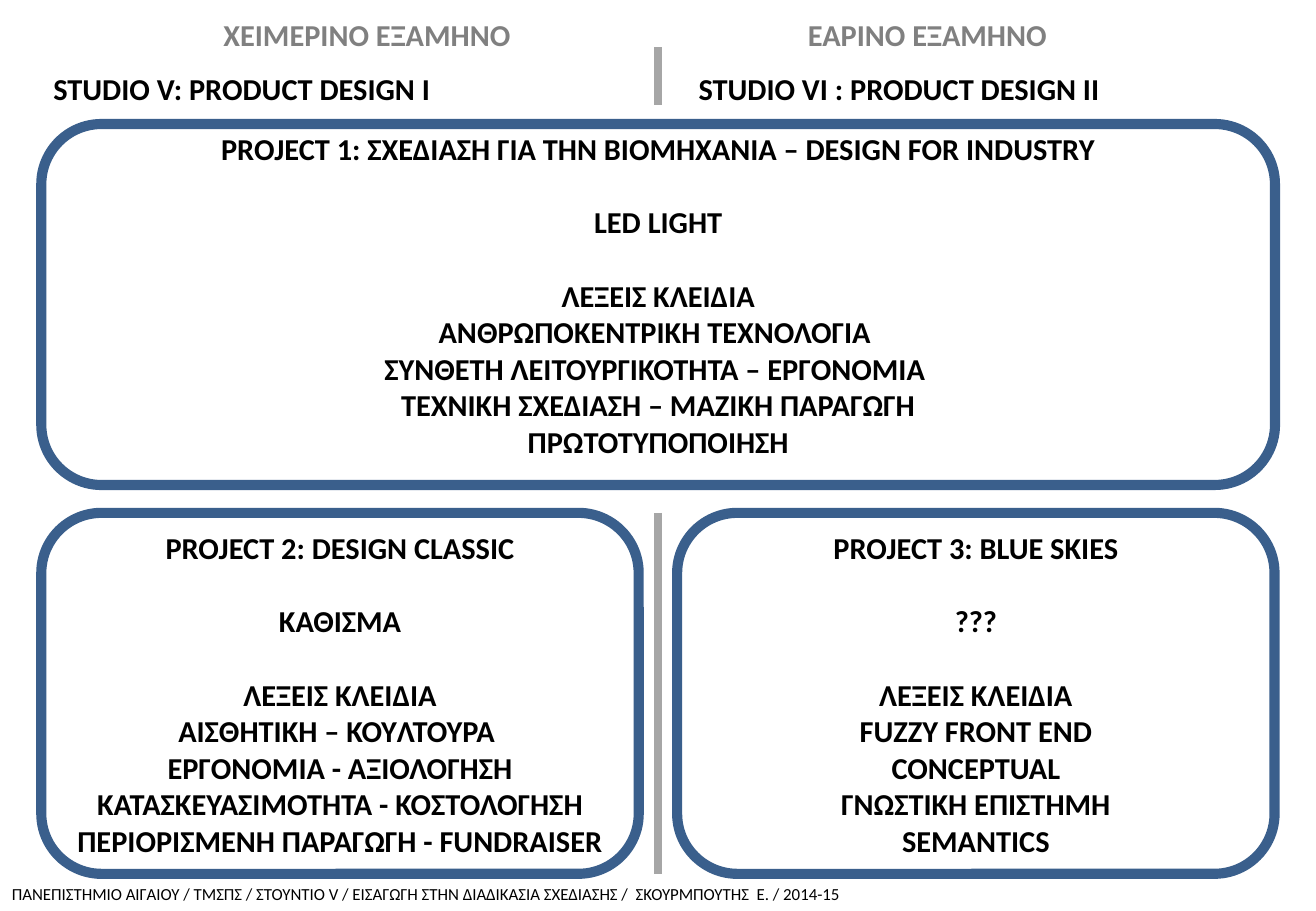
from dataclasses import dataclass

from pptx import Presentation
from pptx.dml.color import RGBColor
from pptx.enum.shapes import MSO_CONNECTOR, MSO_SHAPE
from pptx.enum.text import MSO_ANCHOR, PP_ALIGN
from pptx.oxml.ns import qn
from pptx.util import Pt
from lxml import etree

ROUNDED = MSO_SHAPE.ROUNDED_RECTANGLE
STRAIGHT = MSO_CONNECTOR.STRAIGHT
LEFT, CENTER = PP_ALIGN.LEFT, PP_ALIGN.CENTER
TOP = MSO_ANCHOR.TOP


@dataclass(frozen=True)
class Theme:
    """Colours, font and sizes of the slide."""
    font: str = "Calibri"
    ink: RGBColor = RGBColor(0x00, 0x00, 0x00)
    muted: RGBColor = RGBColor(0x80, 0x80, 0x80)
    divider: RGBColor = RGBColor(0xA6, 0xA6, 0xA6)
    frame: RGBColor = RGBColor(0x3A, 0x5F, 0x8C)
    body: float = 18
    footer: float = 10
    line_height: float = 22
    frame_width: float = 6
    divider_width: float = 4.5


@dataclass(frozen=True)
class Box:
    """A rectangle in points."""
    left: float
    top: float
    width: float
    height: float

    def lengths(self):
        """Return the four lengths for python-pptx."""
        return Pt(self.left), Pt(self.top), Pt(self.width), Pt(self.height)


THEME = Theme()
PAGE = Box(0, 0, 779.76, 540)
INDUSTRY = Box(24.5, 73.5, 731, 214)
CLASSIC = Box(24.5, 304, 354, 214)
BLUE_SKIES = Box(401.25, 304, 354, 214)
DIVIDER_X = 390

SEMESTERS = [
    (24.5, "ΧΕΙΜΕΡΙΝΟ ΕΞΑΜΗΝΟ", 125.3, "STUDIO V: PRODUCT DESIGN I"),
    (406.8, "ΕΑΡΙΝΟ ΕΞΑΜΗΝΟ", 471.6, "STUDIO VΙ : PRODUCT DESIGN II"),
]
PROJECTS = [
    (INDUSTRY, 0, "PROJECT 1: ΣΧΕΔΙΑΣΗ ΓΙΑ ΤΗΝ ΒΙΟΜΗΧΑΝΙΑ – DESIGN FOR INDUSTRY",
     "LED LIGHT",
     ["ΑΝΘΡΩΠΟΚΕΝΤΡΙΚΗ ΤΕΧΝΟΛΟΓΙΑ ", "ΣΥΝΘΕΤΗ ΛΕΙΤΟΥΡΓΙΚΟΤΗΤΑ – ΕΡΓΟΝΟΜΙΑ ",
      "ΤΕΧΝΙΚΗ ΣΧΕΔΙΑΣΗ – ΜΑΖΙΚΗ ΠΑΡΑΓΩΓΗ", "ΠΡΩΤΟΤΥΠΟΠΟΙΗΣΗ"]),
    (CLASSIC, 6, "PROJECT 2: DESIGN CLASSIC", "ΚΑΘΙΣΜΑ",
     ["ΑΙΣΘΗΤΙΚΗ – KOYΛΤΟΥΡΑ ", "ΕΡΓΟΝΟΜΙΑ - ΑΞΙΟΛΟΓΗΣΗ",
      "ΚΑΤΑΣΚΕΥΑΣΙΜΟΤΗΤΑ - ΚΟΣΤΟΛΟΓΗΣΗ", "ΠΕΡΙΟΡΙΣΜΕΝΗ ΠΑΡΑΓΩΓΗ - FUNDRAISER"]),
    (BLUE_SKIES, 6, "PROJECT 3: BLUE SKIES", "???",
     ["FUZZY FRONT END", "CONCEPTUAL", "ΓΝΩΣΤΙΚΗ ΕΠΙΣΤΗΜΗ", "SEMANTICS"]),
]
KEYWORDS = "ΛΕΞΕΙΣ ΚΛΕΙΔΙΑ"
FOOTER = ("ΠΑΝΕΠΙΣΤΗΜΙΟ ΑΙΓΑΙΟΥ / ΤΜΣΠΣ / ΣΤΟΥΝΤΙΟ V / ΕΙΣΑΓΩΓΗ ΣΤΗΝ ΔΙΑΔΙΚΑΣΙΑ ΣΧΕΔΙΑΣΗΣ /"
          "  ΣΚΟΥΡΜΠΟΥΤΗΣ  Ε. / 2014-15")


def add_text(page, box, lines, size=THEME.body, color=THEME.ink, bold=True,
             align=LEFT, spaced=()):
    """Write lines in a text box, with a blank line's gap before the spaced ones."""
    frame = page.shapes.add_textbox(*box.lengths()).text_frame
    frame.word_wrap = True
    frame.vertical_anchor = TOP
    for index, line in enumerate(lines):
        para = frame.paragraphs[0] if index == 0 else frame.add_paragraph()
        para.alignment = align
        if index in spaced:
            para.space_before = Pt(THEME.line_height)
        span = para.add_run()
        span.text = line
        span.font.name = THEME.font
        span.font.size = Pt(size)
        span.font.bold = bold
        span.font.color.rgb = color


def add_divider(page, box):
    """Draw a vertical divider down the left edge of the box."""
    divider = page.shapes.add_connector(
        STRAIGHT, Pt(box.left), Pt(box.top), Pt(box.left), Pt(box.top + box.height))
    divider.line.color.rgb = THEME.divider
    divider.line.width = Pt(THEME.divider_width)
    etree.SubElement(divider.element.spPr, qn("a:effectLst"))


def add_semester(page, box, semester, semester_left, studio):
    """Write the semester name above the studio title."""
    add_text(page, Box(semester_left, box.top, 200, 29), [semester], color=THEME.muted)
    add_text(page, Box(box.left, box.top + 32.4, box.width, 29), [studio])


def add_project(page, box, drop, title, subject, keywords):
    """Draw a project frame with its title, subject and keywords."""
    card = page.shapes.add_shape(ROUNDED, *box.lengths())
    card.shadow.inherit = False
    card.fill.background()
    card.line.color.rgb = THEME.frame
    card.line.width = Pt(THEME.frame_width)
    inner = Box(box.left + 5, box.top + drop, box.width - 10, box.height - 10)
    add_text(page, inner, [title, subject, KEYWORDS, *keywords],
             align=CENTER, spaced=(1, 2))


def main():
    """Build the slide and save it."""
    deck = Presentation()
    deck.slide_width, deck.slide_height = Pt(PAGE.width), Pt(PAGE.height)
    page = deck.slides.add_slide(deck.slide_layouts[6])
    add_text(page, Box(0, 520.5, 560, 19.5), [FOOTER], size=THEME.footer, bold=False)
    for left, semester, semester_left, studio in SEMESTERS:
        add_semester(page, Box(left, 5.8, 300, 61), semester, semester_left, studio)
    for project in PROJECTS:
        add_project(page, *project)
    add_divider(page, Box(DIVIDER_X, 28, 0, 34))
    add_divider(page, Box(DIVIDER_X, CLASSIC.top, 0, CLASSIC.height))
    deck.save("out.pptx")


if __name__ == "__main__":
    main()
